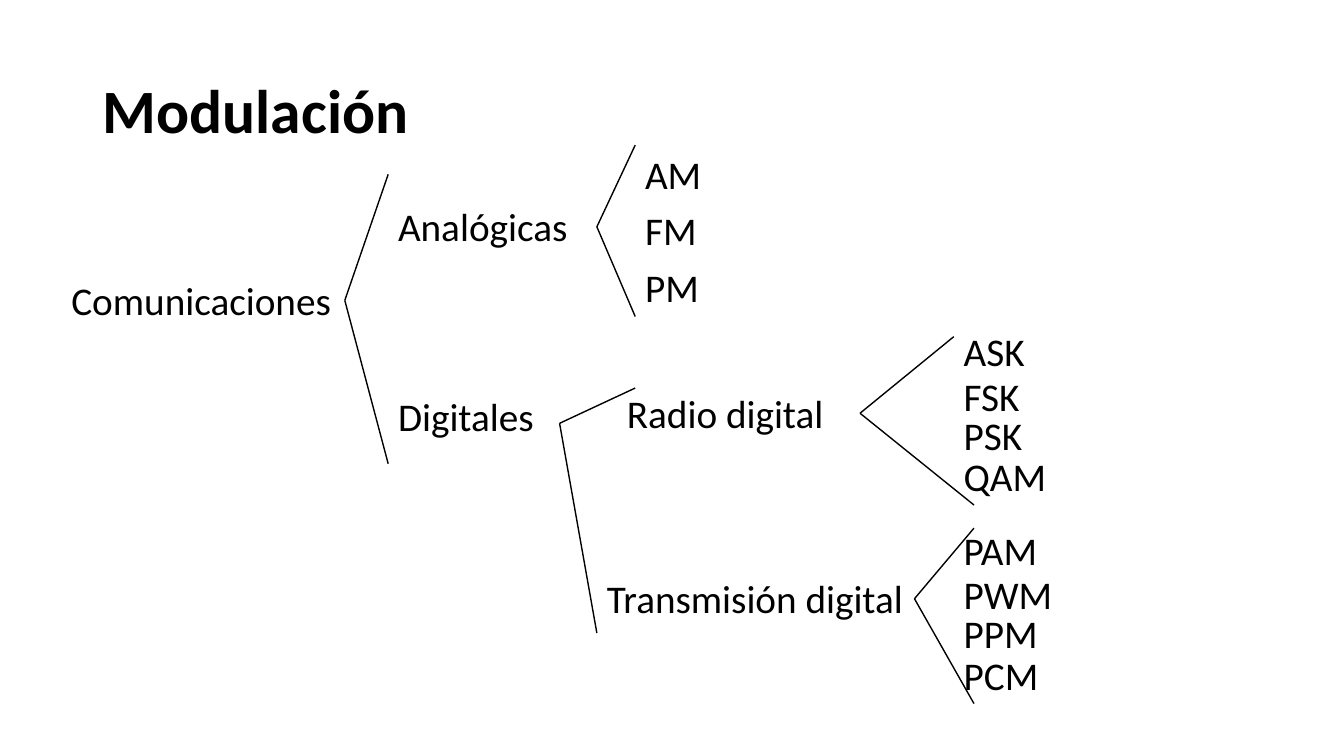
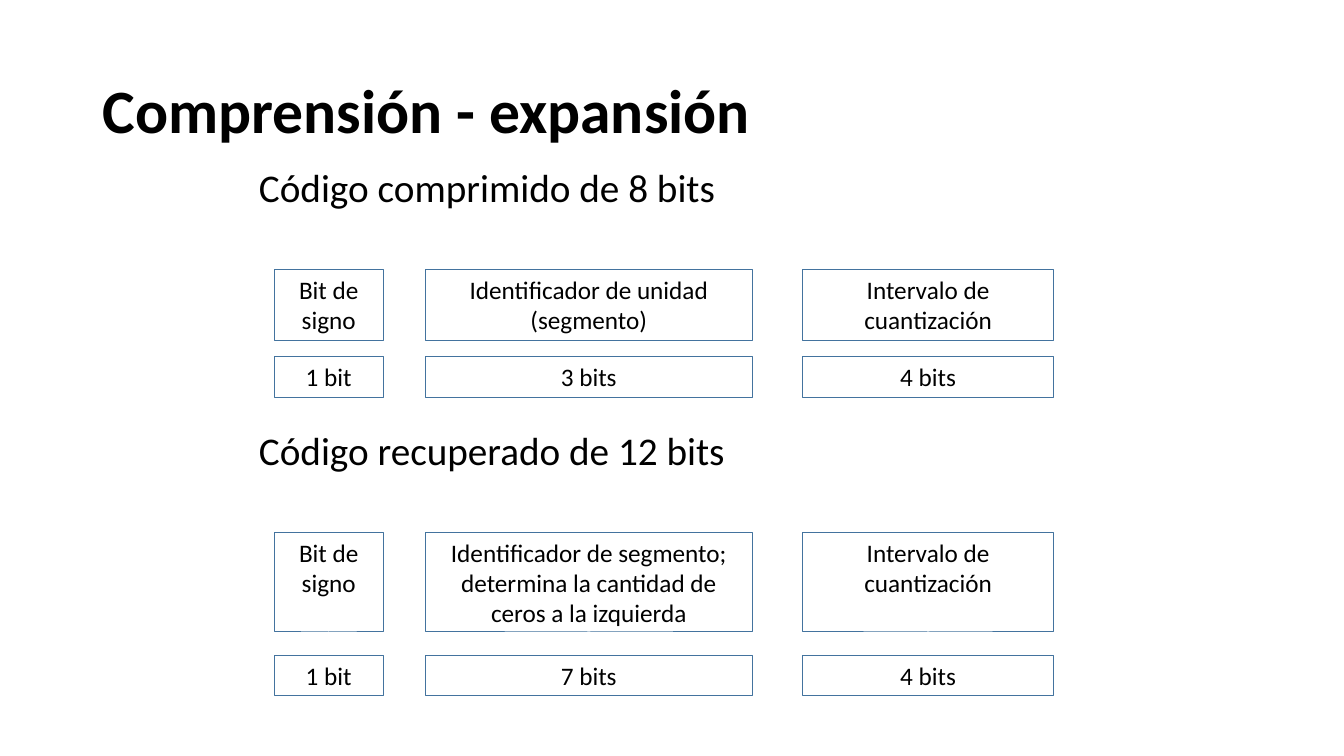
from lxml import etree
from pptx import Presentation
from pptx.dml.color import RGBColor
from pptx.enum import shapes, text
from pptx.oxml import ns
from pptx.util import Inches, Pt

FONT = "Calibri"
BLACK = "000000"
BLUE = "43739E"
LABEL_H = 0.57
LEAF_W = 1.13
ANALOG_STEPS = (0, 0.56, 1.12)
DIGITAL_STEPS = (0, 0.44, 0.83, 1.24)
COLUMNS = ((0.25, 1.08), (1.75, 3.24), (5.49, 2.49))


def rgb(value):
    """Turn a hex string into a colour."""
    return RGBColor.from_string(value)


def write(tf, words, size, align=text.PP_ALIGN.LEFT, anchor=text.MSO_ANCHOR.TOP, bold=False):
    """Put one formatted run into a text frame."""
    tf.word_wrap = True
    tf.vertical_anchor = anchor
    p = tf.paragraphs[0]
    p.alignment = align
    r = p.add_run()
    r.text = words
    r.font.name = FONT
    r.font.size = Pt(size)
    r.font.bold = bold
    r.font.color.rgb = rgb(BLACK)
    return p


def titled_slide(prs, words):
    """Add a title-only slide with the shared title style."""
    s = prs.slides.add_slide(prs.slide_layouts[5])
    title = s.shapes.title
    title.left, title.top = Inches(0.92), Inches(0.4)
    title.width, title.height = Inches(11.5), Inches(1.45)
    p = write(title.text_frame, words, 44, anchor=text.MSO_ANCHOR.MIDDLE, bold=True)
    p.line_spacing = 0.9
    return s


def label(s, x, y, w, words, align=text.PP_ALIGN.LEFT):
    """Add a plain 28-point label."""
    sp = s.shapes.add_textbox(Inches(x), Inches(y), Inches(w), Inches(LABEL_H))
    write(sp.text_frame, words, 28, align)


def bracket(s, x, y, *ends):
    """Draw lines from a tip to ends given as offsets."""
    for dx, dy in ends:
        line = s.shapes.add_connector(
            shapes.MSO_CONNECTOR.STRAIGHT,
            Inches(x), Inches(y), Inches(x + dx), Inches(y + dy))
        line.line.color.rgb = rgb(BLACK)
        line.line.width = Pt(1)
        etree.SubElement(line._element.spPr, ns.qn("a:effectLst"))


def leaves(s, x, y, names, steps):
    """Stack the leaf labels of one branch."""
    for name, dy in zip(names, steps):
        label(s, x, y + dy, LEAF_W, name)


def modulation_tree(s, x, y):
    """Draw the tree of modulation types from its top left corner."""
    label(s, x, y + 1.25, 2.82, "Comunicaciones")
    bracket(s, x + 2.81, y + 1.54, (0.43, -1.25), (0.43, 1.62))

    label(s, x + 3.24, y + 0.52, 2.07, "Analógicas")
    bracket(s, x + 5.31, y + 0.81, (0.38, -0.81), (0.38, 0.89))
    leaves(s, x + 5.69, y, ("AM", "FM", "PM"), ANALOG_STEPS)

    label(s, x + 3.24, y + 2.4, 2.07, "Digitales")
    bracket(s, x + 4.94, y + 2.76, (0.75, -0.35), (0.37, 2.08))

    label(s, x + 5.51, y + 2.37, 3.14, "Radio digital")
    bracket(s, x + 7.92, y + 2.66, (0.93, -0.76), (1.13, 0.91))
    leaves(s, x + 8.85, y + 1.76, ("ASK", "FSK", "PSK", "QAM"), DIGITAL_STEPS)

    label(s, x + 5.31, y + 4.21, 3.14, "Transmisión digital")
    bracket(s, x + 8.46, y + 4.5, (0.59, -0.7), (0.59, 1.04))
    leaves(s, x + 8.85, y + 3.73, ("PAM", "PWM", "PPM", "PCM"), DIGITAL_STEPS)


def field_row(s, x, y, h, fields):
    """Draw one row of outlined fields in the shared columns."""
    for (dx, w), words in zip(COLUMNS, fields):
        sp = s.shapes.add_shape(
            shapes.MSO_SHAPE.RECTANGLE,
            Inches(x + dx), Inches(y), Inches(w), Inches(h))
        sp.shadow.inherit = False
        sp.fill.background()
        sp.line.color.rgb = rgb(BLUE)
        sp.line.width = Pt(0.75)
        write(sp.text_frame, words, 18, text.PP_ALIGN.CENTER)


def code_block(s, x, y, heading, names, name_h, gap, bits):
    """Draw a heading with its field names and bit counts below."""
    label(s, x, y, 9.81, heading, text.PP_ALIGN.JUSTIFY)
    names_y = y + 1.1
    field_row(s, x, names_y, name_h, names)
    field_row(s, x, names_y + name_h + gap, 0.4, bits)


def main():
    """Build and save the presentation."""
    prs = Presentation()
    prs.slide_width, prs.slide_height = Inches(13.33), Inches(7.5)

    s = titled_slide(prs, "Modulación")
    modulation_tree(s, 0.61, 1.44)

    s = titled_slide(prs, "Comprensión - expansión")
    code_block(
        s, 2.47, 1.57, "Código comprimido de 8 bits",
        ("Bit de signo", "Identificador de unidad (segmento)", "Intervalo de cuantización"),
        0.71, 0.16, ("1 bit", "3 bits", "4 bits"))
    code_block(
        s, 2.47, 4.18, "Código recuperado de 12 bits",
        ("Bit de signo",
         "Identificador de segmento; determina la cantidad de ceros a la izquierda",
         "Intervalo de cuantización"),
        0.99, 0.23, ("1 bit", "7 bits", "4 bits"))

    prs.save("out.pptx")


if __name__ == "__main__":
    main()
